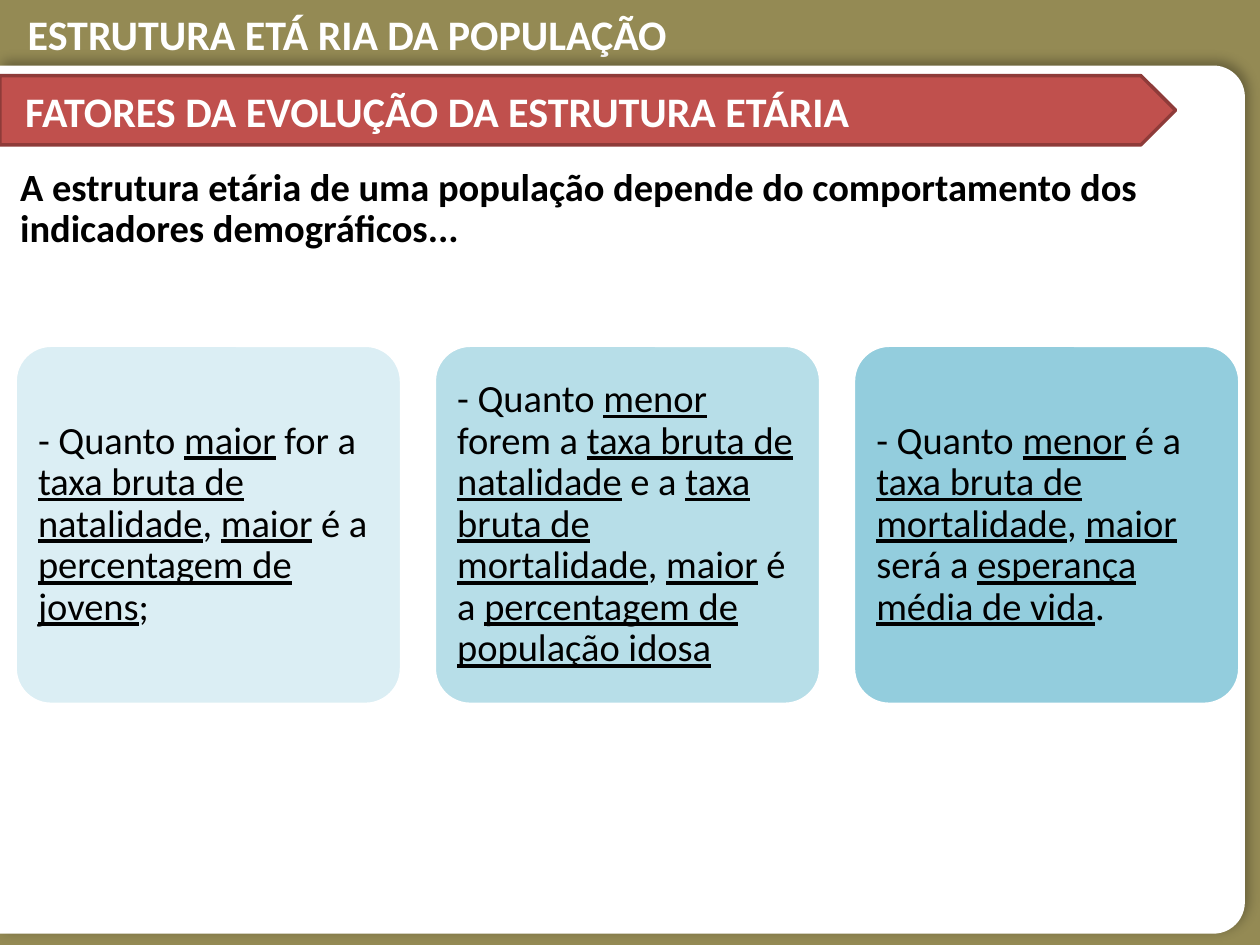
from dataclasses import dataclass

from lxml import etree
from pptx import Presentation
from pptx.dml.color import RGBColor
from pptx.enum.shapes import MSO_SHAPE
from pptx.enum.text import MSO_ANCHOR, MSO_AUTO_SIZE, PP_ALIGN
from pptx.oxml.ns import qn
from pptx.util import Inches, Pt

TOP, MIDDLE = MSO_ANCHOR.TOP, MSO_ANCHOR.MIDDLE
LEFT = PP_ALIGN.LEFT
NO_AUTOFIT = MSO_AUTO_SIZE.NONE
TITLE_ONLY = 5


@dataclass(frozen=True)
class Theme:
    font: str = "Calibri"
    heading_size: int = 24
    body_size: int = 22
    frame: str = "948A54"
    paper: str = "FFFFFF"
    ink: str = "000000"
    banner: str = "C0504D"
    banner_edge: str = "8E3B39"
    cards: tuple = ("DBEEF4", "B7DEE8", "93CDDD")


THEME = Theme()

# Text between underscores is underlined.
FACTORS = (
    "- Quanto _maior_ for a _taxa bruta de natalidade_, _maior_ é a "
    "_percentagem de jovens_;",
    "- Quanto _menor_ forem a _taxa bruta de natalidade_ e a "
    "_taxa bruta de mortalidade_, _maior_ é a "
    "_percentagem de população idosa_",
    "- Quanto _menor_ é a _taxa bruta de mortalidade_, _maior_ será a "
    "_esperança média de vida_.",
)


def write(shape, text, *, size=THEME.body_size, color=THEME.ink, bold=False,
          anchor=MIDDLE, insets=(0.1, 0.05, 0.1, 0.05), line_spacing=1.0):
    frame = shape.text_frame
    frame.word_wrap = True
    frame.auto_size = NO_AUTOFIT
    frame.vertical_anchor = anchor
    (frame.margin_left, frame.margin_top,
     frame.margin_right, frame.margin_bottom) = map(Inches, insets)
    paragraph = frame.paragraphs[0]
    paragraph.alignment = LEFT
    paragraph.line_spacing = line_spacing
    for index, part in enumerate(text.split("_")):
        if not part:
            continue
        run = paragraph.add_run()
        run.text = part
        font = run.font
        font.name, font.size, font.bold = THEME.font, Pt(size), bold
        font.color.rgb = RGBColor.from_string(color)
        font.underline = index % 2 == 1


def add_panel(slide, kind, box, fill, edge=None):
    panel = slide.shapes.add_shape(kind, *map(Inches, box))
    panel.shadow.inherit = False
    panel.fill.solid()
    panel.fill.fore_color.rgb = RGBColor.from_string(fill)
    if edge:
        panel.line.color.rgb = RGBColor.from_string(edge)
        panel.line.width = Pt(2)
    else:
        panel.line.fill.background()
    return panel


def add_soft_shadow(shape):
    effects = shape._element.spPr.find(qn("a:effectLst"))
    shadow = etree.SubElement(
        effects, qn("a:outerShdw"), blurRad=str(Pt(7)), dist=str(Pt(3)),
        dir=str(315 * 60000), algn="ctr", rotWithShape="0")
    color = etree.SubElement(shadow, qn("a:srgbClr"), val=THEME.ink)
    etree.SubElement(color, qn("a:alpha"), val="30000")


def add_header(slide, box, text):
    title = slide.shapes.title
    title.left, title.top, title.width, title.height = map(Inches, box)
    write(title, text, size=THEME.heading_size, color=THEME.paper, bold=True,
          anchor=TOP)


def add_page(slide, box):
    """Place a sheet whose two right-hand corners are rounded."""
    left, top, width, height = box
    # A quarter turn swaps the sides around the same centre.
    turned = (left + (width - height) / 2, top + (height - width) / 2,
              height, width)
    page = add_panel(slide, MSO_SHAPE.ROUND_2_SAME_RECTANGLE, turned,
                     THEME.paper)
    page.adjustments[0] = 0.25 / height
    page.rotation = 90
    add_soft_shadow(page)


def add_banner(slide, box, text):
    banner = add_panel(slide, MSO_SHAPE.PENTAGON, box, THEME.banner,
                       THEME.banner_edge)
    write(banner, text, size=THEME.heading_size, color=THEME.paper, bold=True,
          insets=(0.2, 0.05, 0.1, 0.05))


def add_introduction(slide, box, text):
    introduction = slide.shapes.add_textbox(*map(Inches, box))
    write(introduction, text, bold=True, insets=(0.13,) * 4, line_spacing=0.9)


def add_factor_cards(slide, box, factors, gap=0.26):
    left, top, width, height = box
    card_width = (width - gap * (len(factors) - 1)) / len(factors)
    for index, (factor, fill) in enumerate(zip(factors, THEME.cards)):
        card_left = left + index * (card_width + gap)
        card = add_panel(slide, MSO_SHAPE.ROUNDED_RECTANGLE,
                         (card_left, top, card_width, height), fill,
                         THEME.paper)
        card.adjustments[0] = 0.1
        write(card, factor, insets=(0.1,) * 4, line_spacing=0.9)


def main():
    deck = Presentation()
    deck.slide_width, deck.slide_height = Inches(10), Inches(7.5)
    slide = deck.slides.add_slide(deck.slide_layouts[TITLE_ONLY])
    slide.background.fill.solid()
    slide.background.fill.fore_color.rgb = RGBColor.from_string(THEME.frame)

    add_header(slide, (0.12, 0.02, 8.03, 0.5),
               "ESTRUTURA ETÁ RIA DA POPULAÇÃO")
    add_page(slide, (0, 0.52, 9.88, 6.89))
    add_introduction(slide, (0.03, 1.15, 9.72, 1.03),
                     "A estrutura etária de uma população depende do "
                     "comportamento dos indicadores demográficos...")
    add_factor_cards(slide, (0.12, 2.74, 9.72, 2.85), FACTORS)
    add_banner(slide, (0, 0.6, 9.33, 0.55),
               "FATORES DA EVOLUÇÃO DA ESTRUTURA ETÁRIA")
    deck.save("out.pptx")


if __name__ == "__main__":
    main()
